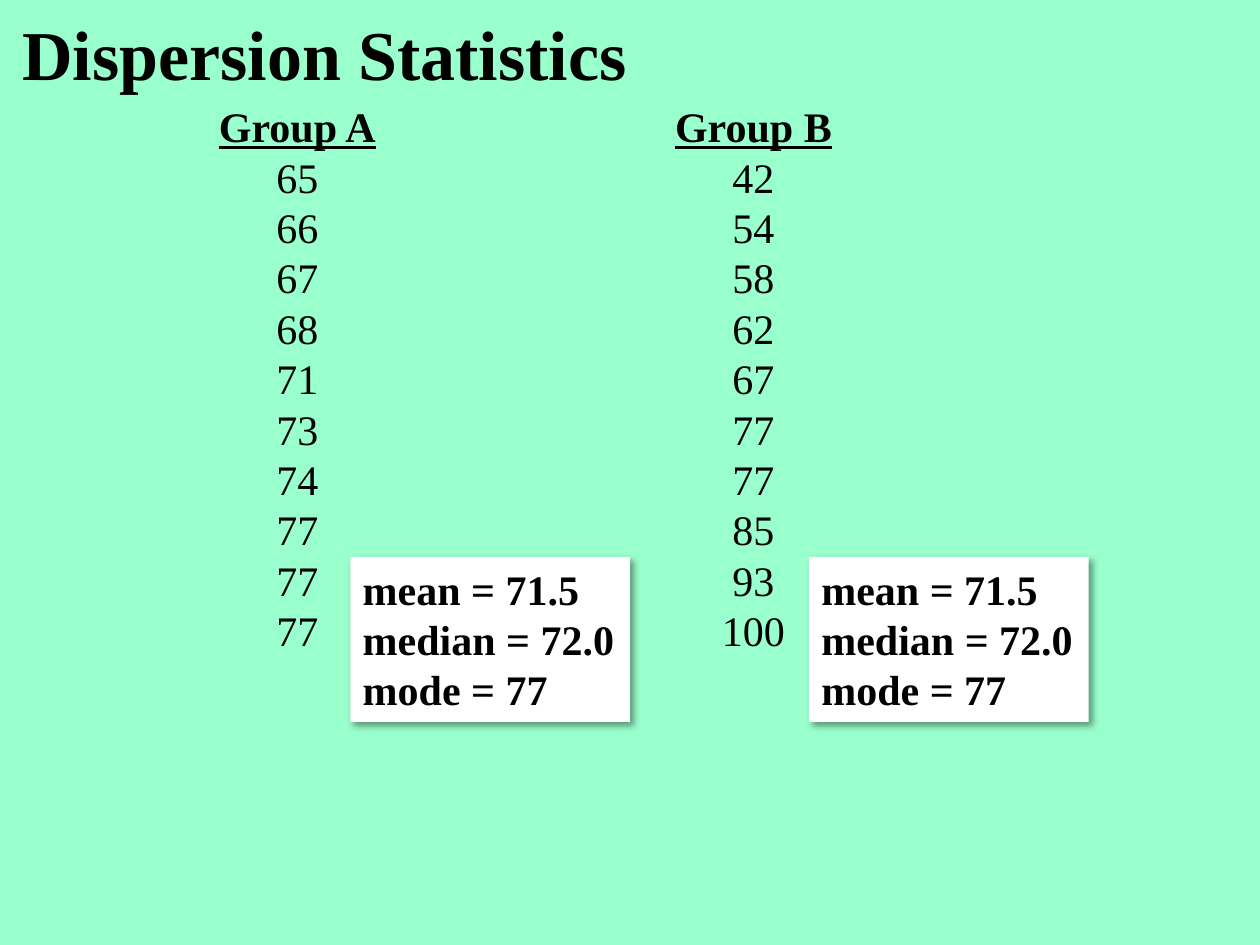
from lxml import etree
from pptx import Presentation
from pptx.dml.color import RGBColor
from pptx.enum.shapes import MSO_SHAPE
from pptx.enum.text import MSO_ANCHOR, MSO_AUTO_SIZE, PP_ALIGN
from pptx.oxml import parse_xml
from pptx.util import Inches, Pt

LEFT, CENTER = PP_ALIGN.LEFT, PP_ALIGN.CENTER
MIDDLE, TOP = MSO_ANCHOR.MIDDLE, MSO_ANCHOR.TOP
FIT_SHAPE = MSO_AUTO_SIZE.SHAPE_TO_FIT_TEXT
RECTANGLE = MSO_SHAPE.RECTANGLE
FONT = "Times New Roman"
SHADOW = (
    '<a:outerShdw xmlns:a="http://schemas.openxmlformats.org/drawingml/2006/main" '
    'blurRad="50800" dist="38100" dir="2700000" algn="tl" rotWithShape="0">'
    '<a:srgbClr val="000000"><a:alpha val="40000"/></a:srgbClr></a:outerShdw>'
)


def color(value):
    return RGBColor.from_string(value)


def write_lines(frame, lines, size, align, bold_lines):
    for index, line in enumerate(lines):
        para = frame.paragraphs[0] if index == 0 else frame.add_paragraph()
        para.text = line
        para.alignment = align
        para.font.name = FONT
        para.font.size = Pt(size)
        para.font.bold = index < bold_lines
        para.font.color.rgb = color("000000")


deck = Presentation()
deck.slide_width = Inches(10)
deck.slide_height = Inches(7.5)
page = deck.slides.add_slide(deck.slide_layouts[6])
page.background.fill.solid()
page.background.fill.fore_color.rgb = color("99FFCC")

title = page.shapes.add_textbox(Inches(0.08), Inches(0.08), Inches(8.5), Inches(0.67))
title.text_frame.word_wrap = True
title.text_frame.vertical_anchor = MIDDLE
write_lines(title.text_frame, ["Dispersion Statistics"], 40, LEFT, 1)

groups = [
    ("Group A", 1.63, [65, 66, 67, 68, 71, 73, 74, 77, 77, 77]),
    ("Group B", 5.25, [42, 54, 58, 62, 67, 77, 77, 85, 93, 100]),
]
for name, left, scores in groups:
    column = page.shapes.add_textbox(Inches(left), Inches(0.75), Inches(1.46), Inches(4.54))
    column.text_frame.word_wrap = False
    column.text_frame.auto_size = FIT_SHAPE
    write_lines(column.text_frame, [name, *map(str, scores)], 24, CENTER, 1)
    column.text_frame.paragraphs[0].font.underline = True

statistics = ["mean = 71.5", "median = 72.0", "mode = 77"]
for left in (2.78, 6.42):
    box = page.shapes.add_shape(RECTANGLE, Inches(left), Inches(4.42), Inches(2.22), Inches(1.31))
    box.fill.solid()
    box.fill.fore_color.rgb = color("FFFFFF")
    box.line.fill.background()
    box.shadow.inherit = False
    effects = box.element.spPr.find("{*}effectLst")
    effects.append(parse_xml(SHADOW))
    box.text_frame.word_wrap = False
    box.text_frame.auto_size = FIT_SHAPE
    box.text_frame.vertical_anchor = TOP
    write_lines(box.text_frame, statistics, 24, LEFT, len(statistics))

deck.save("out.pptx")
